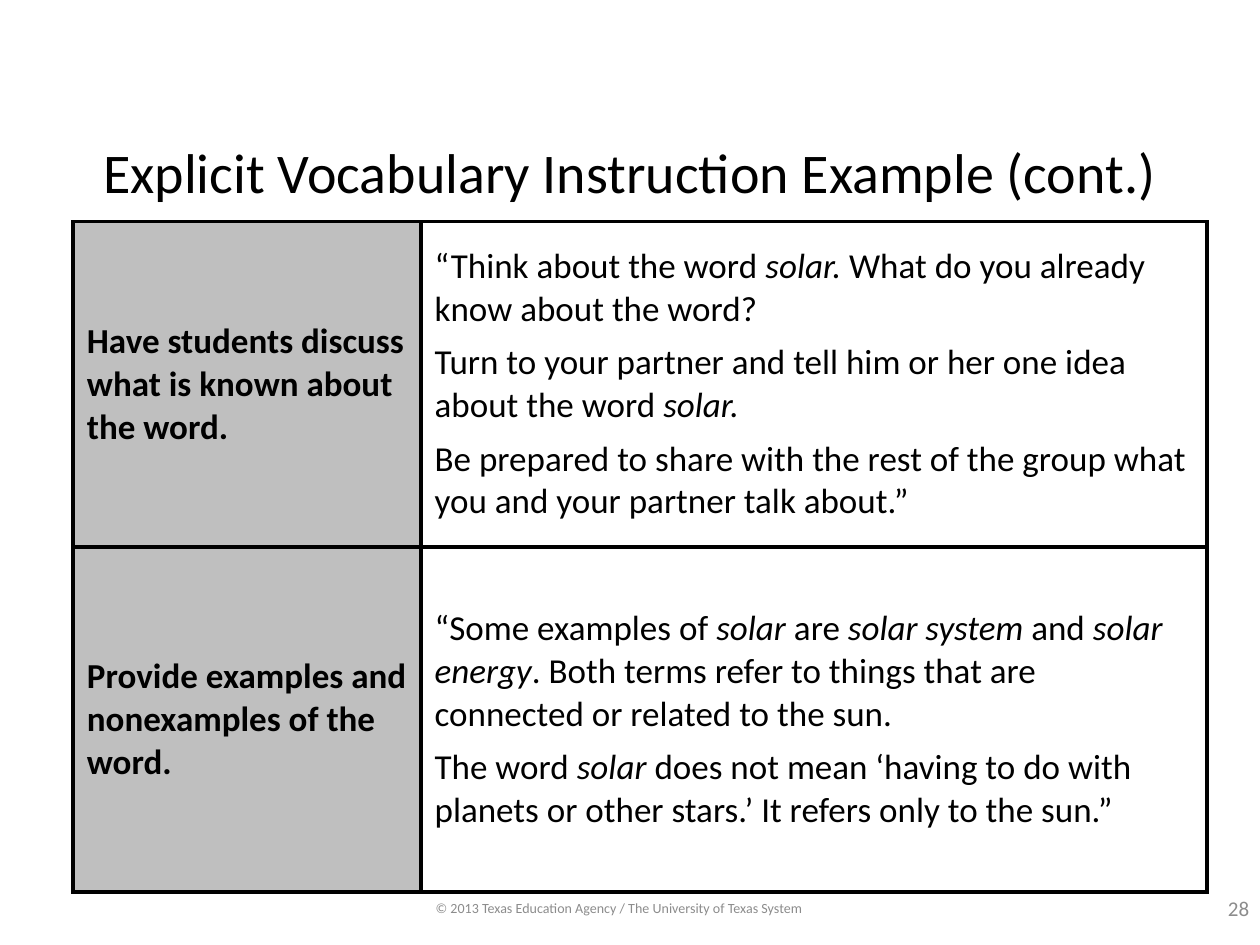
from lxml.etree import SubElement
from pptx import Presentation
from pptx.dml.color import RGBColor
from pptx.enum.text import MSO_ANCHOR, PP_ALIGN
from pptx.oxml.ns import qn
from pptx.util import Inches, Pt

BLACK, GRAY, LABEL_FILL, WHITE = "000000", "8C8C8C", "BFBFBF", "FFFFFF"
COLUMN_WIDTHS = (2.76, 6.24)
ROW_HEIGHTS = (2.58, 2.74)

# Asterisks enclose italic words.
STEPS = [
    ("Have students discuss what is known about the word.", [
        "“Think about the word *solar. *What do you already know about the word?",
        "Turn to your partner and tell him or her one idea about the word *solar.*",
        "Be prepared to share with the rest of the group what you and your "
        "partner talk about.”",
    ]),
    ("Provide examples and nonexamples of the word.", [
        "“Some examples of *solar *are *solar system* and *solar energy*. Both "
        "terms refer to things that are connected or related to the sun.",
        "The word *solar *does not mean ‘having to do with planets or other "
        "stars.’ It refers only to the sun.”",
    ]),
]


def color(value):
    return RGBColor.from_string(value)


def add_spans(paragraph, text, size, tint=BLACK, bold=False):
    """Write text as runs, with the parts between asterisks in italics."""
    for index, part in enumerate(text.split("*")):
        if not part:
            continue
        span = paragraph.add_run()
        span.text = part
        formats = {"name": "Calibri", "size": Pt(size), "bold": bold,
                   "italic": index % 2 == 1}
        for name, value in formats.items():
            setattr(span.font, name, value)
        span.font.color.rgb = color(tint)


def write_line(box, text, size, tint, anchor):
    frame = box.text_frame
    frame.word_wrap = True
    frame.vertical_anchor = anchor
    paragraph = frame.paragraphs[0]
    paragraph.alignment = PP_ALIGN.CENTER
    add_spans(paragraph, text, size, tint)


def add_title(page, text):
    title = page.shapes.title
    places = {"left": 0.5, "top": 1.04, "width": 9, "height": 0.84}
    for name, value in places.items():
        setattr(title, name, Inches(value))
    write_line(title, text, 32, BLACK, MSO_ANCHOR.TOP)


def add_footer(page, text, size, *place):
    box = page.shapes.add_textbox(*map(Inches, place))
    write_line(box, text, size, GRAY, MSO_ANCHOR.MIDDLE)


def add_borders(cell):
    properties = cell._tc.get_or_add_tcPr()
    for position, side in enumerate(("a:lnL", "a:lnR", "a:lnT", "a:lnB")):
        line = properties.makeelement(qn(side), {"w": str(Pt(2.25))})
        properties.insert(position, line)
        fill = SubElement(line, qn("a:solidFill"))
        SubElement(fill, qn("a:srgbClr"), val=BLACK)


def fill_cell(cell, texts, fill, bold):
    formats = {"vertical_anchor": MSO_ANCHOR.MIDDLE,
               "margin_left": Inches(0.11), "margin_right": Inches(0.11),
               "margin_top": Inches(0.05), "margin_bottom": Inches(0.05)}
    for name, value in formats.items():
        setattr(cell, name, value)
    cell.fill.solid()
    cell.fill.fore_color.rgb = color(fill)
    add_borders(cell)
    frame = cell.text_frame
    for index, text in enumerate(texts):
        paragraph = frame.add_paragraph() if index else frame.paragraphs[0]
        paragraph.space_after = Pt(6)
        add_spans(paragraph, text, 20, bold=bold)


def add_steps_table(page):
    place = (0.58, 1.76, sum(COLUMN_WIDTHS), sum(ROW_HEIGHTS))
    table = page.shapes.add_table(
        len(STEPS), len(COLUMN_WIDTHS), *map(Inches, place)).table
    table.first_row = table.horz_banding = False
    for column, width in zip(table.columns, COLUMN_WIDTHS):
        column.width = Inches(width)
    for index, (label, script) in enumerate(STEPS):
        table.rows[index].height = Inches(ROW_HEIGHTS[index])
        fill_cell(table.cell(index, 0), [label], LABEL_FILL, True)
        fill_cell(table.cell(index, 1), script, WHITE, False)


def main():
    deck = Presentation()
    deck.slide_width, deck.slide_height = Inches(10), Inches(7.5)
    page = deck.slides.add_slide(deck.slide_layouts[5])
    add_title(page, "Explicit Vocabulary Instruction Example (cont.)")
    add_steps_table(page)
    add_footer(page, "© 2013 Texas Education Agency / The University of Texas System",
               8, 2.08, 7.08, 5.67, 0.25)
    add_footer(page, "28", 12, 9.58, 7.07, 0.5, 0.27)
    deck.save("out.pptx")


if __name__ == "__main__":
    main()
